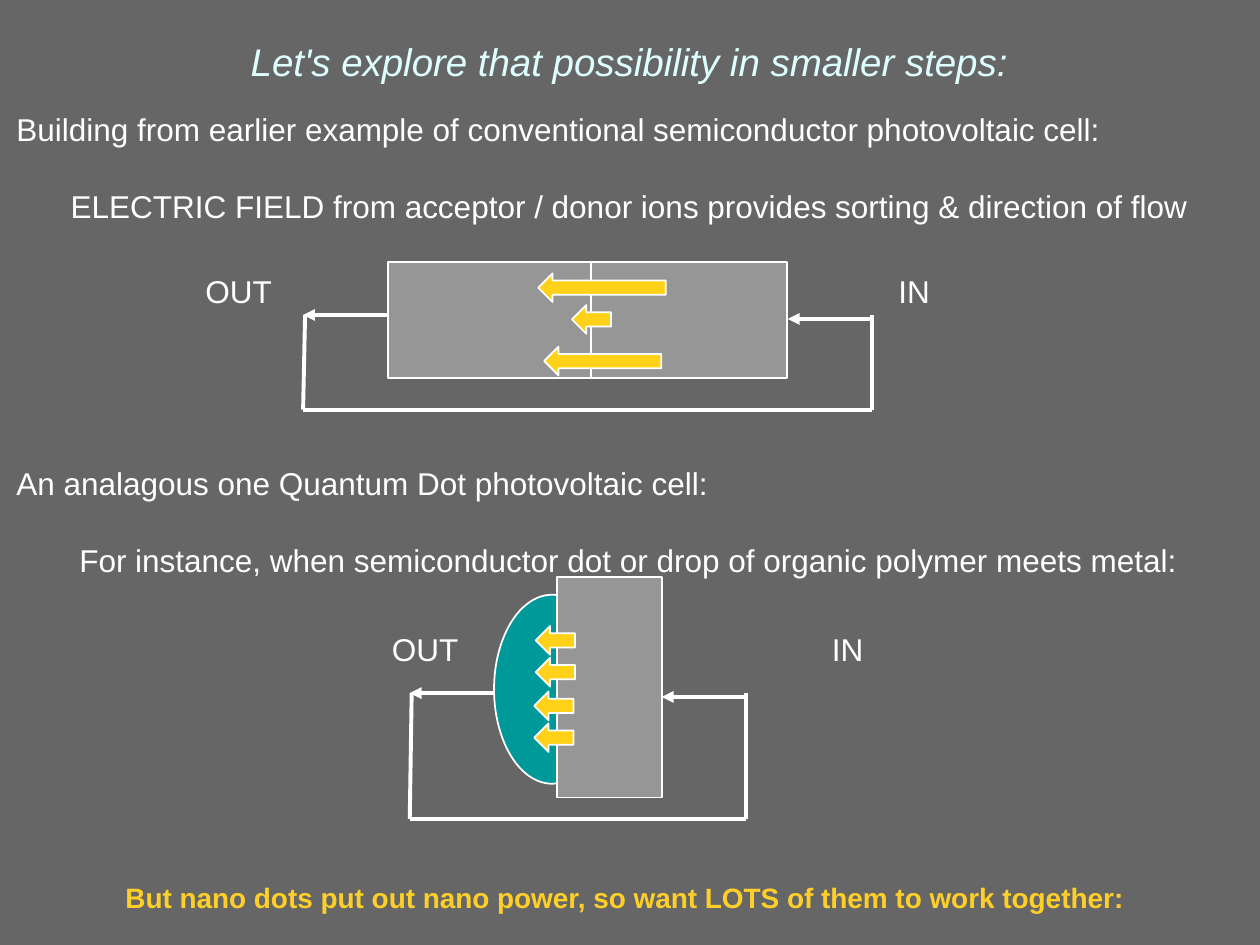
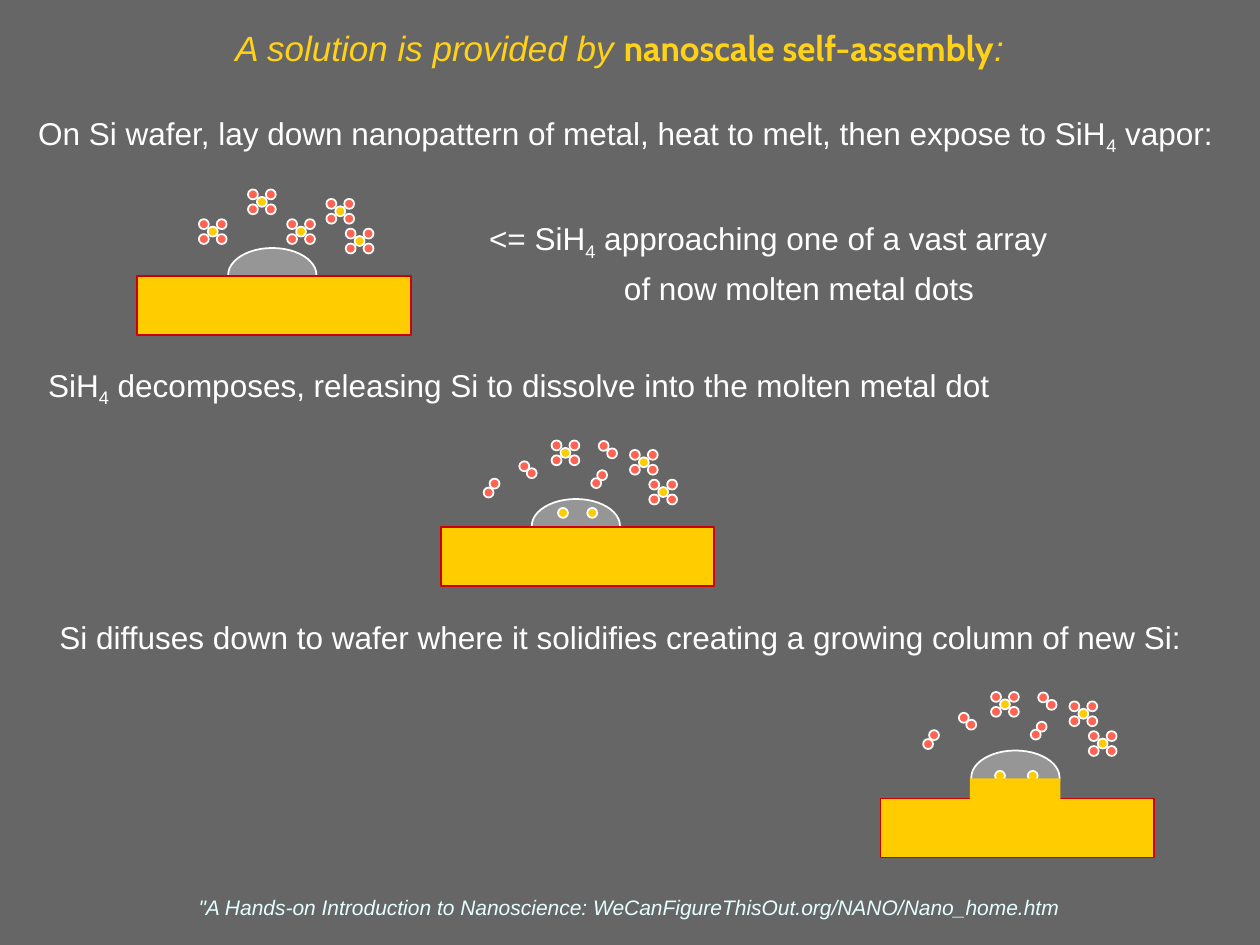
import dataclasses
from typing import NamedTuple

import pptx
import pptx.dml.color
import pptx.enum.shapes
import pptx.enum.text
import pptx.oxml
import pptx.oxml.ns
import pptx.util

Cm = pptx.util.Cm
Pt = pptx.util.Pt
Shape = pptx.enum.shapes.MSO_SHAPE
Align = pptx.enum.text.PP_ALIGN
Anchor = pptx.enum.text.MSO_ANCHOR


@dataclasses.dataclass(frozen=True)
class Theme:
    back: str = "666666"
    white: str = "FFFFFF"
    ice: str = "DEFFFF"
    pale: str = "E5FFFF"
    gold: str = "FFD119"
    amber: str = "FECF29"
    gray: str = "969696"
    teal: str = "009999"
    wafer: str = "FFCC00"
    edge: str = "CC0000"
    gas: str = "FF6351"
    face: str = "Arial"
    accent: str = "Cabin"
    head: float = 22
    title: float = 20
    body: float = 18
    close: float = 16
    foot: float = 12
    thin: float = 1
    wire: float = 2.25


THEME = Theme()


class Style(NamedTuple):
    size: float = THEME.body
    color: str = THEME.white
    bold: bool = False
    slant: bool = False
    align: Align = Align.LEFT
    anchor: Anchor = Anchor.TOP


class Part(NamedTuple):
    text: str
    sub: bool = False
    accent: bool = False


class Line(NamedTuple):
    """One text box: its place in cm and its paragraphs, each a list of parts."""
    left: float
    top: float
    width: float
    height: float
    paras: list
    style: Style = Style()
    indent: float = 0  # left margin of the paragraphs after the first


class Form(NamedTuple):
    kind: Shape
    left: float
    top: float
    width: float
    height: float
    fill: str
    line: str | None = THEME.white


class Loop(NamedTuple):
    """A wire around a cell: out and into are the x where it meets the cell."""
    left: float
    right: float
    top: float
    base: float
    out: float
    into: float


class Scene(NamedTuple):
    """A metal dot on a wafer; Si places are measured from the dot's corner."""
    left: float
    top: float
    drop: float
    silane: list
    pairs: list
    solved: list
    column: bool = False


BODY = Style()
MID = Style(align=Align.CENTER)
HEAD = Style(THEME.head, THEME.ice, slant=True, align=Align.CENTER)
TITLE = Style(THEME.title, THEME.gold, slant=True, align=Align.CENTER,
              anchor=Anchor.MIDDLE)
CLOSE = Style(THEME.close, THEME.amber, bold=True, align=Align.CENTER)
FOOT = Style(THEME.foot, THEME.pale, slant=True, align=Align.CENTER,
             anchor=Anchor.BOTTOM)
ROW = 0.98  # height of a box with one body line
FULL = 24.97
INSET = 0.13
ARROW = 0.58
DOT = 0.2
DOME = (1.78, 1.09)
SLAB = (5.51, 1.19)
FOUR = Part("4", sub=True)


def rgb(code: str) -> pptx.dml.color.RGBColor:
    return pptx.dml.color.RGBColor.from_string(code)


def start(deck):
    slide = deck.slides.add_slide(deck.slide_layouts[6])
    slide.background.fill.solid()
    slide.background.fill.fore_color.rgb = rgb(THEME.back)
    return slide


def format_run(run, part: Part, style: Style) -> None:
    font = run.font
    font.name = THEME.accent if part.accent else THEME.face
    font.size = Pt(style.size)
    font.color.rgb = rgb(style.color)
    font.bold = style.bold or part.accent
    font.italic = style.slant and not part.accent
    if part.sub:
        run._r.get_or_add_rPr().set("baseline", "-25000")


def write(slide, line: Line) -> None:
    box = slide.shapes.add_textbox(Cm(line.left), Cm(line.top),
                                   Cm(line.width), Cm(line.height))
    frame = box.text_frame
    frame.word_wrap = True
    frame.vertical_anchor = line.style.anchor
    frame.margin_left = frame.margin_right = Cm(INSET)
    frame.margin_top = frame.margin_bottom = Cm(INSET)
    frame.text = "\n".join(parts[0].text for parts in line.paras)
    for rank, (para, parts) in enumerate(zip(frame.paragraphs, line.paras)):
        para.alignment = line.style.align
        if rank:
            para.space_before = Pt(4)
            para._p.get_or_add_pPr().set("marL", str(Cm(line.indent)))
        for part in parts[1:]:
            para.add_run().text = part.text
        for run, part in zip(para.runs, parts):
            format_run(run, part, line.style)


def draw(slide, form: Form) -> None:
    shape = slide.shapes.add_shape(form.kind, Cm(form.left), Cm(form.top),
                                   Cm(form.width), Cm(form.height))
    shape.shadow.inherit = False
    shape.fill.solid()
    shape.fill.fore_color.rgb = rgb(form.fill)
    if form.line:
        shape.line.color.rgb = rgb(form.line)
        shape.line.width = Pt(THEME.thin)
    else:
        shape.line.fill.background()


def wire(slide, x1: float, y1: float, x2: float, y2: float,
         tip: bool = False) -> None:
    link = slide.shapes.add_connector(pptx.enum.shapes.MSO_CONNECTOR.STRAIGHT,
                                      Cm(x1), Cm(y1), Cm(x2), Cm(y2))
    link.line.color.rgb = rgb(THEME.white)
    link.line.width = Pt(THEME.wire)
    make = pptx.oxml.ns.qn
    if tip:
        tail = link.line._get_or_add_ln().makeelement(make("a:tailEnd"),
                                                      {"type": "triangle"})
        link.line._get_or_add_ln().append(tail)
    props = link._element.spPr
    props.append(props.makeelement(make("a:effectLst"), {}))


def close_loop(slide, loop: Loop) -> None:
    wire(slide, loop.left, loop.base, loop.left + 0.04, loop.top)
    wire(slide, loop.right, loop.top, loop.right, loop.base)
    wire(slide, loop.right, loop.base, loop.left, loop.base)
    wire(slide, loop.out, loop.top, loop.left, loop.top, tip=True)
    wire(slide, loop.right, loop.top + 0.08, loop.into, loop.top + 0.08,
         tip=True)


def atom(slide, left: float, top: float, fill: str) -> None:
    draw(slide, Form(Shape.OVAL, left, top, DOT, DOT, fill))


def stage(slide, scene: Scene) -> None:
    x, y = scene.left, scene.top
    draw(slide, Form(Shape.OVAL, x, y, *DOME, THEME.gray))
    draw(slide, Form(Shape.RECTANGLE, x - 1.83, y + scene.drop, *SLAB,
                     THEME.wafer, THEME.edge))
    for dx, dy in scene.solved:
        atom(slide, x + dx, y + dy, THEME.wafer)
    if scene.column:
        draw(slide, Form(Shape.RECTANGLE, x - 0.03, y + 0.56, 1.83, SLAB[1],
                         THEME.wafer, None))
    for dx, dy in scene.silane:
        atom(slide, x + dx, y + dy, THEME.wafer)
        for sx in (0.18, -0.18):
            for sy in (-0.15, 0.15):
                atom(slide, x + dx + sx, y + dy + sy, THEME.gas)
    for dx, dy, sx, sy in scene.pairs:
        atom(slide, x + dx, y + dy, THEME.gas)
        atom(slide, x + dx + sx, y + dy + sy, THEME.gas)


def plain(left: float, top: float, width: float, text: str,
          style: Style = BODY) -> Line:
    return Line(left, top, width, ROW, [[Part(text)]], style)


STEPS = [
    plain(0.2, 0.64, FULL, "Let's explore that possibility in smaller steps:",
          HEAD),
    plain(0.2, 2.08, FULL, "Building from earlier example of conventional "
          "semiconductor photovoltaic cell:"),
    plain(0.2, 3.65, FULL, "ELECTRIC FIELD from acceptor / donor ions "
          "provides sorting & direction of flow", MID),
    plain(4.01, 5.35, 2.5, "OUT"),
    plain(17.98, 5.35, 2.5, "IN"),
    plain(0.2, 9.22, FULL, "An analagous one Quantum Dot photovoltaic cell:"),
    plain(1.47, 10.77, 23.7, "For instance, when semiconductor dot or drop "
          "of organic polymer meets metal:"),
    plain(7.77, 12.58, 2.5, "OUT"),
    plain(16.64, 12.58, 2.5, "IN"),
    plain(0.2, 17.63, 24.8, "But nano dots put out nano power, so want LOTS "
          "of them to work together:", CLOSE),
]
CELLS = [
    Form(Shape.RECTANGLE, 11.86, 5.29, 4.01, 2.33, THEME.gray),
    Form(Shape.RECTANGLE, 7.83, 5.29, 4.09, 2.33, THEME.gray),
    Form(Shape.OVAL, 9.96, 11.99, 2.34, 3.81, THEME.teal),
    Form(Shape.RECTANGLE, 11.23, 11.63, 2.11, 4.45, THEME.gray),
]
FIELD = [  # left, top, width of each field arrow
    (10.97, 6.99, 2.36), (10.85, 5.51, 2.57), (11.53, 6.15, 0.79),
    (10.8, 12.62, 0.79), (10.8, 13.26, 0.79),
    (10.77, 13.94, 0.79), (10.77, 14.58, 0.79),
]
LOOPS = [
    Loop(6.11, 17.58, 6.35, 8.26, 7.8, 15.88),
    Loop(8.26, 15.04, 13.97, 16.51, 9.96, 13.34),
]

GROWTH = [
    Line(0.64, 0, 23.7, 1.9,
         [[Part("A solution is provided by "),
           Part("nanoscale self-assembly", accent=True), Part(":")]], TITLE),
    Line(0.64, 2.16, 24.76, ROW,
         [[Part("On Si wafer, lay down nanopattern of metal, heat to melt, "
                "then expose to SiH"), FOUR, Part(" vapor:")]]),
    Line(9.73, 4.28, 15.04, 1.98,
         [[Part("<= SiH"), FOUR, Part(" approaching one of a vast array")],
          [Part("of now molten metal dots")]], indent=2.72),
    Line(0.84, 7.24, 23.5, ROW,
         [[Part("SiH"), FOUR, Part(" decomposes, releasing Si to dissolve "
                                   "into the molten metal dot")]]),
    plain(1.07, 12.32, 23.7, "Si diffuses down to wafer where it solidifies "
          "creating a growing column of new Si:"),
    Line(0.84, 17.93, 23.7, 0.74,
         [[Part("\"A Hands-on Introduction to Nanoscience: "
                "WeCanFigureThisOut.org/NANO/Nano_home.htm")]], FOOT),
]
SILANE = [(2.16, -0.84), (2.55, -0.24), (0.58, -1.03)]
FRESH = [(1.37, -0.43), (-0.41, -0.43)]
PAIRS = [  # first H atom, then the step to its partner
    (-0.25, -0.76, 0.15, 0.14), (-0.85, -0.41, -0.12, 0.18),
    (1.35, -1.17, 0.17, 0.15), (1.32, -0.58, -0.12, 0.16),
]
SCENES = [
    Scene(4.6, 5.0, 0.56, SILANE + FRESH, [], []),
    Scene(10.72, 10.06, 0.56, SILANE, PAIRS, [(0.53, 0.18), (1.12, 0.18)]),
    Scene(19.58, 15.13, 0.97, SILANE, PAIRS, [(0.48, 0.41), (1.14, 0.41)],
          column=True),
]


def show_steps(deck) -> None:
    slide = start(deck)
    for line in STEPS:
        write(slide, line)
    for cell in CELLS:
        draw(slide, cell)
    for left, top, width in FIELD:
        draw(slide, Form(Shape.LEFT_ARROW, left, top, width, ARROW,
                         THEME.gold))
    for loop in LOOPS:
        close_loop(slide, loop)


def show_growth(deck) -> None:
    slide = start(deck)
    for line in GROWTH:
        write(slide, line)
    for scene in SCENES:
        stage(slide, scene)


def main() -> None:
    deck = pptx.Presentation()
    deck.slide_width = Cm(25.4)
    deck.slide_height = Cm(19.05)
    show_steps(deck)
    show_growth(deck)
    deck.save("out.pptx")


if __name__ == "__main__":
    main()
